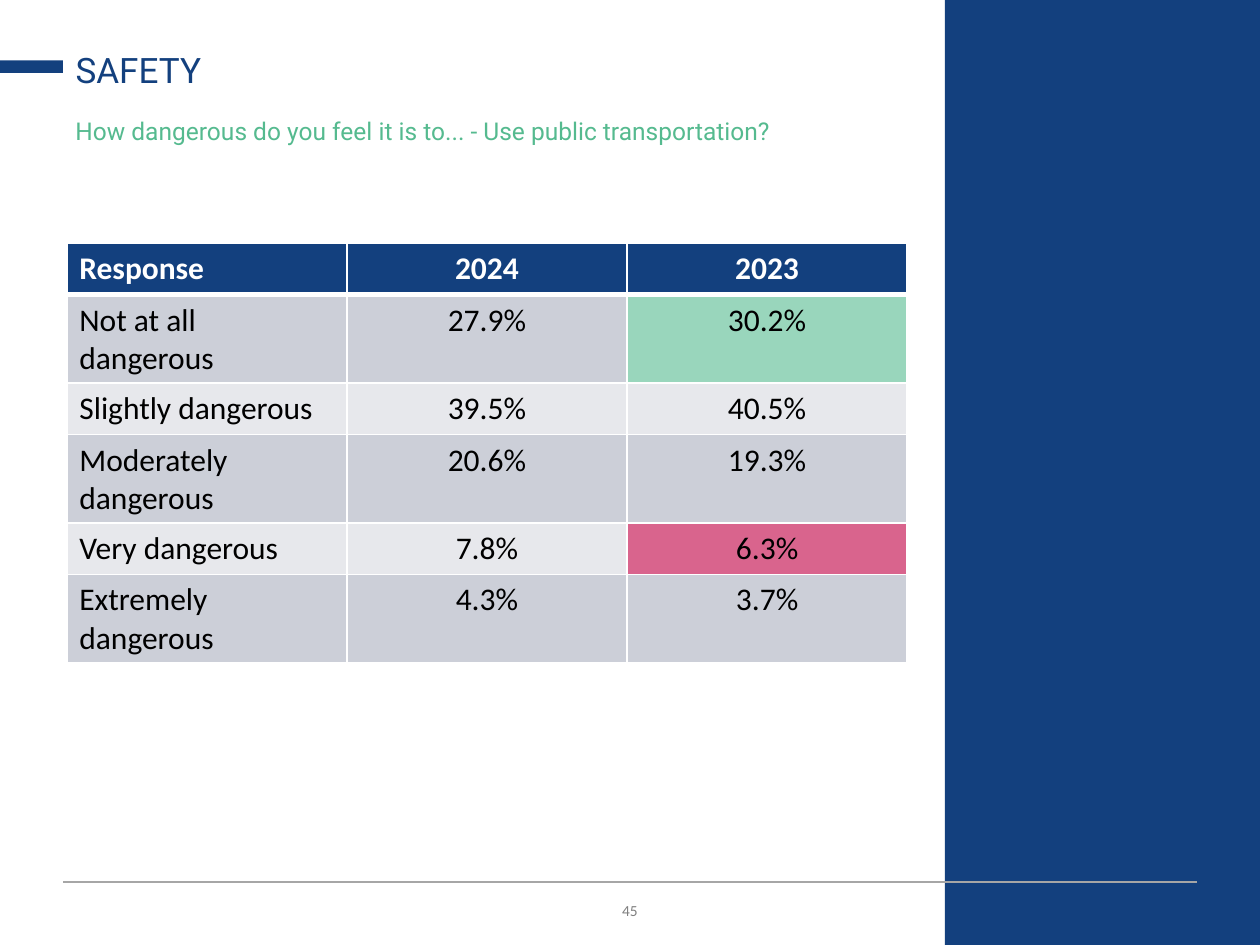
from lxml import etree
from pptx import Presentation
from pptx import util as u
from pptx.dml.color import RGBColor
from pptx.enum import shapes, text
from pptx.oxml import ns

INK = {"navy": "13407E", "mint": "55BA8F", "rule": "A6A6A6", "page": "808080",
       "white": "FFFFFF", "black": "000000", "dark": "CCCFD8", "light": "E7E8EC",
       "up": "99D6BC", "down": "D9648D"}
WIDE, HIGH = 10, 7.5
ROWS = [("Response", "2024", "2023"),
        ("Not at all dangerous", "27.9%", "30.2%"),
        ("Slightly dangerous", "39.5%", "40.5%"),
        ("Moderately dangerous", "20.6%", "19.3%"),
        ("Very dangerous", "7.8%", "6.3%"),
        ("Extremely dangerous", "4.3%", "3.7%")]
MARKS = {(1, 2): "up", (4, 2): "down"}
LEFT, MID = text.PP_ALIGN.LEFT, text.PP_ALIGN.CENTER


def tint(name):
    """Return the named colour."""
    return RGBColor.from_string(INK[name])


def span(box):
    """Turn a box in inches into lengths."""
    return [u.Inches(n) for n in box]


def write(frame, words, size, ink, font="Calibri", bold=False, align=LEFT):
    """Add one run to the first paragraph of a frame."""
    para = frame.paragraphs[0]
    para.alignment = align
    run = para.add_run()
    run.text = words
    run.font.size, run.font.name, run.font.bold = u.Pt(size), font, bold
    run.font.color.rgb = tint(ink)
    return run


def block(slide, box):
    """Draw a plain navy rectangle."""
    item = slide.shapes.add_shape(shapes.MSO_SHAPE.RECTANGLE, *span(box))
    item.shadow.inherit = False
    item.fill.solid()
    item.fill.fore_color.rgb = tint("navy")
    item.line.fill.background()


def foot(slide, box):
    """Draw the footer rule with the page number below it."""
    x, y, w, h = box
    line = slide.shapes.add_connector(shapes.MSO_CONNECTOR.STRAIGHT,
                                      *span((x, y, x + w, y)))
    line.line.color.rgb = tint("rule")
    line.line.width = u.Pt(0.75)
    etree.SubElement(line._element.spPr, ns.qn("a:effectLst"))
    frame = slide.shapes.add_textbox(*span((x, y + 0.06, w, h - 0.06))).text_frame
    frame.word_wrap = True
    frame.vertical_anchor = text.MSO_ANCHOR.MIDDLE
    run = write(frame, "45", 11, "page", align=MID)
    run.font._element.set("cap", "small")


def head(slide, box):
    """Place the accent bar, title and question."""
    x, y, w, h = box
    block(slide, (0, y + 0.19, x, 0.1))
    title = slide.shapes.title
    title.left, title.top, title.width, title.height = span((x, y, w, 0.48))
    ask = slide.shapes.add_textbox(*span((x, y + 0.61, w, h - 0.61)))
    for item, anchor in ((title, text.MSO_ANCHOR.BOTTOM), (ask, text.MSO_ANCHOR.TOP)):
        frame = item.text_frame
        frame.word_wrap = True
        frame.auto_size = text.MSO_AUTO_SIZE.NONE
        frame.vertical_anchor = anchor
        frame.paragraphs[0].line_spacing = 0.9
    write(title.text_frame, "SAFETY", 20, "navy", "Roboto")
    write(ask.text_frame,
          "How dangerous do you feel it is to... - Use public transportation?",
          14, "mint", "Roboto")


def edge(cell, row):
    """Give a cell white borders, heavy under the header."""
    props = cell._tc.get_or_add_tcPr()
    for side in "LRTB":
        thick = 3 if (row, side) in ((0, "B"), (1, "T")) else 1
        line = etree.SubElement(props, ns.qn("a:ln" + side), w=str(u.Pt(thick)))
        fill = etree.SubElement(line, ns.qn("a:solidFill"))
        etree.SubElement(fill, ns.qn("a:srgbClr"), val=INK["white"])


def grid(slide, box):
    """Fill the response table with equal columns and rows."""
    x, y, w, h = box
    table = slide.shapes.add_table(len(ROWS), len(ROWS[0]), *span(box)).table
    for col in table.columns:
        col.width = u.Inches(w / len(ROWS[0]))
    for r, row in enumerate(ROWS):
        table.rows[r].height = u.Inches(h / len(ROWS))
        band = "navy" if r == 0 else "dark" if r % 2 else "light"
        for c, words in enumerate(row):
            cell = table.cell(r, c)
            edge(cell, r)
            cell.fill.solid()
            cell.fill.fore_color.rgb = tint(MARKS.get((r, c), band))
            write(cell.text_frame, words, 18, "black" if r else "white",
                  bold=r == 0, align=MID if c else LEFT)


def main():
    """Build and save the slide."""
    deck = Presentation()
    deck.slide_width, deck.slide_height = span((WIDE, HIGH))
    slide = deck.slides.add_slide(deck.slide_layouts[5])
    block(slide, (WIDE * 0.75, 0, WIDE * 0.25, HIGH))
    foot(slide, (WIDE * 0.05, 7, WIDE * 0.9, 0.36))
    head(slide, (WIDE * 0.05, 0.29, WIDE * 0.67, 1.28))
    grid(slide, (0.53, 1.93, 6.67, 2.46))
    deck.save("out.pptx")


if __name__ == "__main__":
    main()
